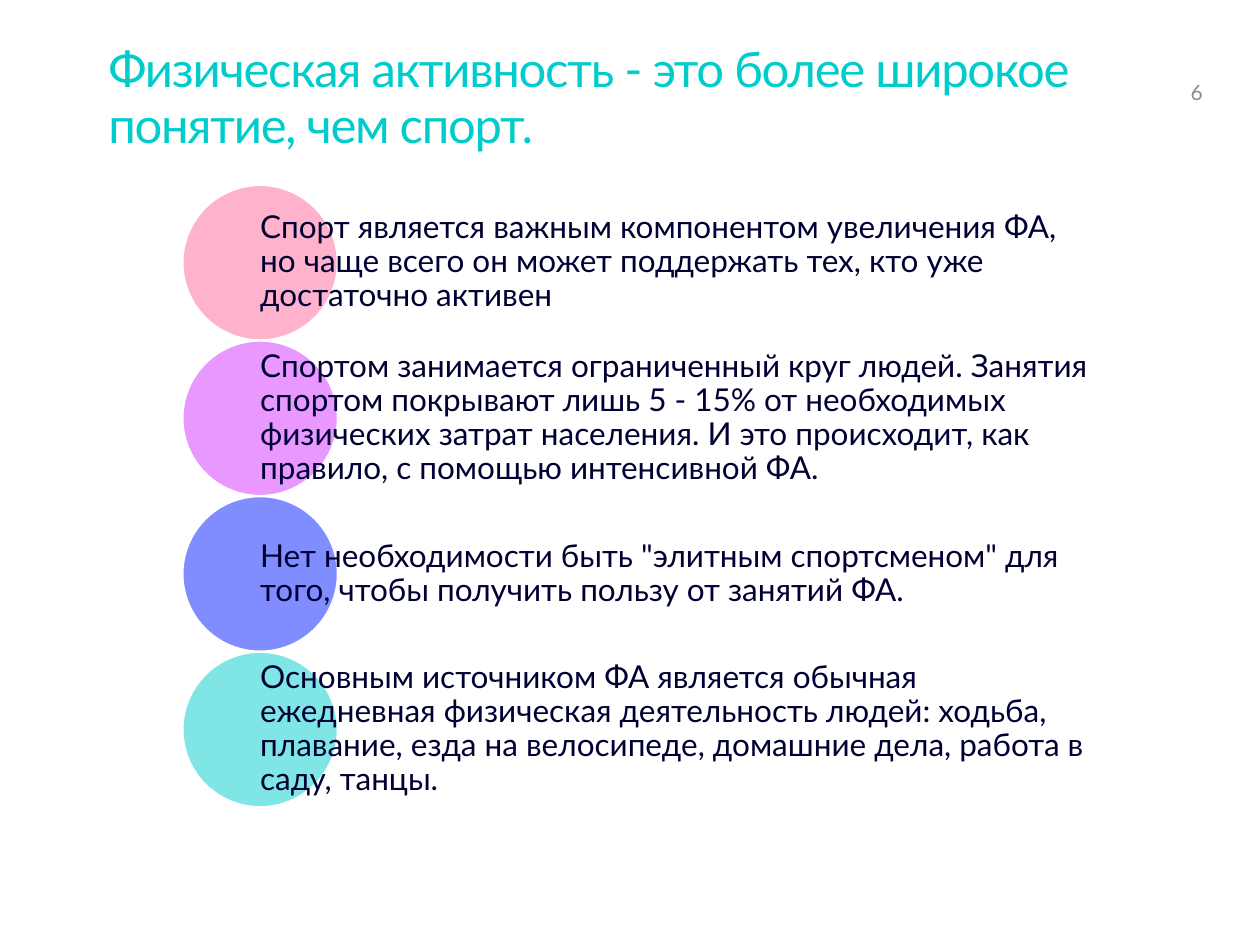
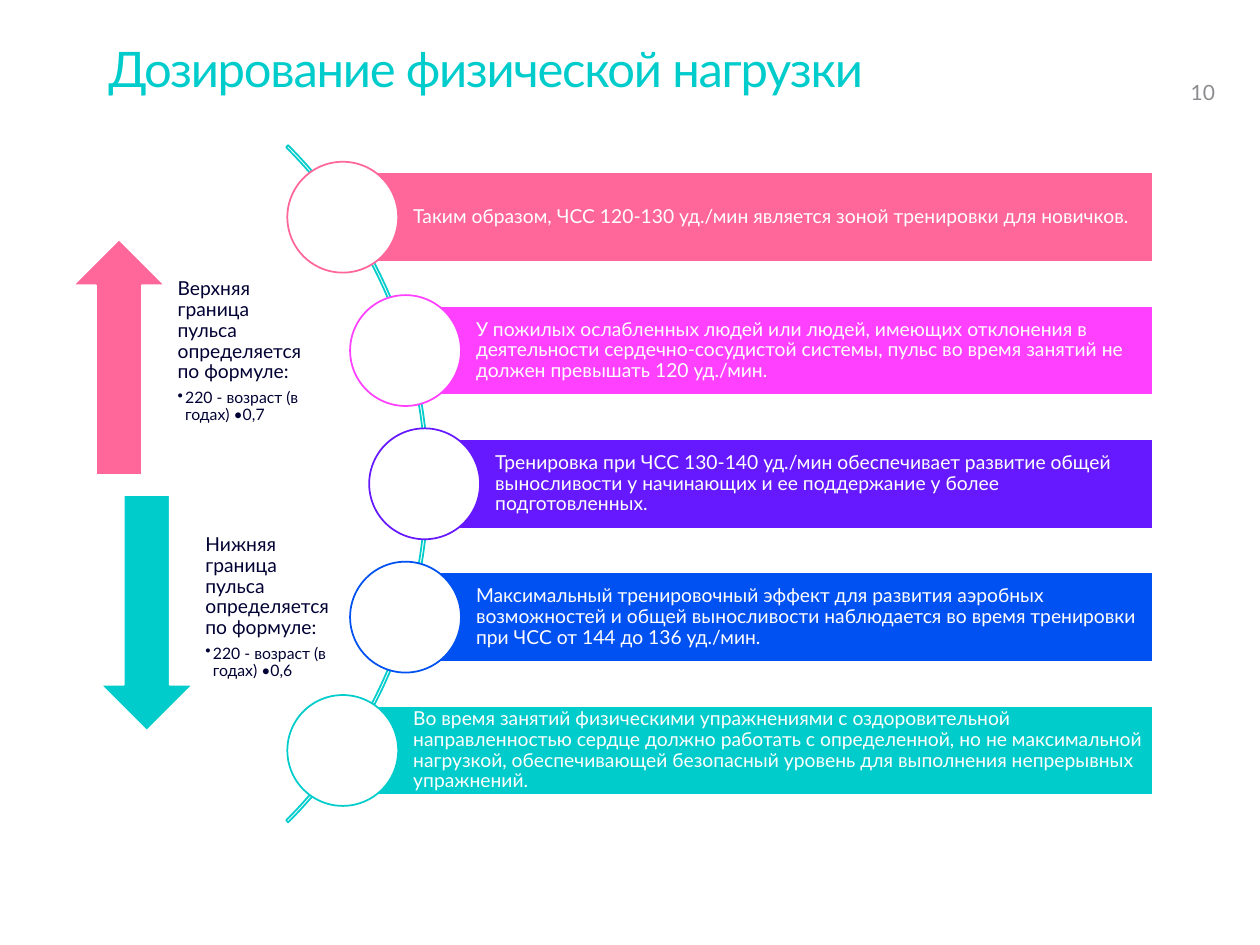
from math import sqrt

from lxml.etree import SubElement
from pptx import Presentation
from pptx.dml.color import RGBColor
from pptx.enum.shapes import MSO_SHAPE as Kind
from pptx.enum.text import MSO_ANCHOR as Anchor, PP_ALIGN as Align
from pptx.oxml.ns import qn
from pptx.util import Inches, Pt

FONT = "Lato"
TEAL, PINK, INK, WHITE, GREY = "00CCCC", "FF6699", "000033", "FFFFFF", "8C8C90"

SPORT = {
    "title": "Физическая активность - это более широкое понятие, чем спорт.",
    "page": "6",
    "points": [
        (PINK, "Спорт является важным компонентом увеличения ФА, но чаще всего "
               "он может поддержать тех, кто уже достаточно активен"),
        ("D233FF", "Спортом занимается ограниченный круг людей. Занятия спортом "
                   "покрывают лишь 5 - 15% от необходимых физических затрат "
                   "населения. И это происходит, как правило, с помощью "
                   "интенсивной ФА."),
        ("001CFF", "Нет необходимости быть \"элитным спортсменом\" для того, "
                   "чтобы получить пользу от занятий ФА."),
        (TEAL, "Основным источником ФА является обычная ежедневная физическая "
               "деятельность людей: ходьба, плавание, езда на велосипеде, "
               "домашние дела, работа в саду, танцы."),
    ],
}

PULSE = {
    "title": "Дозирование физической нагрузки",
    "page": "10",
    "limits": [
        (Kind.UP_ARROW, PINK, 0.58, 1.9,
         "Верхняя граница пульса определяется по формуле:",
         "220 - возраст (в годах) •0,7"),
        (Kind.DOWN_ARROW, TEAL, 0.8, 3.93,
         "Нижняя граница пульса определяется по формуле:",
         "220 - возраст (в годах) •0,6"),
    ],
    "zones": [
        (PINK, "Таким образом, ЧСС 120-130 уд./мин является зоной тренировки "
               "для новичков."),
        ("FF40FF", "У пожилых ослабленных людей или людей, имеющих отклонения в "
                   "деятельности сердечно-сосудистой системы, пульс во время "
                   "занятий не должен превышать 120 уд./мин."),
        ("6619FF", "Тренировка при ЧСС 130-140 уд./мин обеспечивает развитие "
                   "общей выносливости у начинающих и ее поддержание у более "
                   "подготовленных."),
        ("0051F2", "Максимальный тренировочный эффект для развития аэробных "
                   "возможностей и общей выносливости наблюдается во время "
                   "тренировки при ЧСС от 144 до 136 уд./мин."),
        (TEAL, "Во время занятий физическими упражнениями с оздоровительной "
               "направленностью сердце должно работать с определенной, но не "
               "максимальной нагрузкой, обеспечивающей безопасный уровень для "
               "выполнения непрерывных упражнений."),
    ],
}


def color(code):
    return RGBColor.from_string(code)


def place(shape, *box):
    shape.left, shape.top, shape.width, shape.height = map(Inches, box)


def frame(shape, pads, anchor, wrap=True):
    """Set the insets (left, top, right, bottom), anchor and wrapping."""
    text = shape.text_frame
    text.margin_left, text.margin_top, text.margin_right, text.margin_bottom = map(
        Inches, pads)
    text.vertical_anchor, text.word_wrap = anchor, wrap
    return text


def style(par, size, code):
    par.alignment = Align.LEFT
    for run in par.runs:
        run.font.name, run.font.size = FONT, Pt(size)
        run.font.color.rgb = color(code)


def tighten(par, after):
    """Use 90% line spacing and a space after given in percent of a line."""
    par.line_spacing = 0.9
    gap = SubElement(par._p.get_or_add_pPr(), qn("a:spcAft"))
    SubElement(gap, qn("a:spcPct"), val=str(after * 1000))


def bullet(par, indent):
    props = par._p.get_or_add_pPr()
    props.set("marL", str(Inches(indent)))
    props.set("indent", str(-Inches(indent)))
    SubElement(props, qn("a:buChar"), char="•")


def fill_text(shape, text, size, code, pads):
    body = frame(shape, pads, Anchor.MIDDLE)
    body.text = text
    par = body.paragraphs[0]
    tighten(par, 35)
    style(par, size, code)
    return body


def draw(slide, kind, box, fill, line=WHITE, alpha=None):
    shape = slide.shapes.add_shape(kind, *map(Inches, box))
    shape.shadow.inherit = False
    if fill:
        shape.fill.solid()
        shape.fill.fore_color.rgb = color(fill)
    else:
        shape.fill.background()
    if alpha:
        tone = shape.fill._xPr.find(".//" + qn("a:srgbClr"))
        SubElement(tone, qn("a:alpha"), val=str(alpha * 1000))
    shape.line.color.rgb = color(line)
    shape.line.width = Pt(1)
    return shape


def add_box(slide, *box):
    return slide.shapes.add_textbox(*map(Inches, box))


def start(deck, data, high):
    """Add a slide with its title, of the given height, and its number."""
    slide = deck.slides.add_slide(deck.slide_layouts[5])
    title = slide.shapes.title
    place(title, 0.86, 0.28, 8.62, high)
    text = frame(title, (0, 0.05, 0, 0.05), Anchor.TOP)
    text.text = data["title"]
    par = text.paragraphs[0]
    par.line_spacing = Pt(32)
    style(par, 28, TEAL)
    par.runs[0].font._element.set("spc", "-70")

    page = frame(add_box(slide, 9.45, 0.4, 0.38, 0.47),
                 (0, 0.04, 0, 0.04), Anchor.BOTTOM, False)
    page.text = data["page"]
    style(page.paragraphs[0], 12, GREY)
    return slide


def add_points(slide, points):
    left, top, size, step = 1.45, 1.47, 1.23, 1.235
    for row, (tint, text) in enumerate(points):
        y = top + row * step
        draw(slide, Kind.OVAL, (left, y, size, size), tint, alpha=50)
        box = add_box(slide, left + size / 2, y, 6.58, size)
        fill_text(box, text, 18, INK, (0, 0.03, 0, 0.03))


def add_limits(slide, limits):
    wide, high = 0.73, 1.87
    for kind, tint, x, y, head, rule in limits:
        draw(slide, kind, (x, y, wide, high), tint)
        box = add_box(slide, x + wide + 0.01, y, 1.23, high)
        body = fill_text(box, head, 11, INK, (0.09, 0, 0.09, 0.09))
        par = body.add_paragraph()
        par.text = rule
        par.level = 1
        tighten(par, 15)
        bullet(par, 0.06)
        style(par, 9, INK)


def add_zones(slide, zones):
    """Set the circles along an arc, each with a bar to the right edge."""
    mid_x, mid_y, arc, reach = -0.4, 3.84, 3.8, 3.77
    step, size, high, right = 1.058, 0.88, 0.71, 9.15
    curve = draw(slide, Kind.BLOCK_ARC,
                 (mid_x - arc, mid_y - arc, 2 * arc, 2 * arc), None, TEAL)
    for spot, value in enumerate((189, 27, 0.003)):
        curve.adjustments[spot] = value
    for row, (tint, text) in enumerate(zones):
        rise = (row - len(zones) // 2) * step
        x, y = mid_x + sqrt(reach ** 2 - rise ** 2), mid_y + rise
        bar = draw(slide, Kind.RECTANGLE, (x, y - high / 2, right - x, high), tint)
        fill_text(bar, text, 11, WHITE, (0.56, 0.03, 0.03, 0.03))
        draw(slide, Kind.OVAL, (x - size / 2, y - size / 2, size, size), WHITE, tint)


def main():
    deck = Presentation()
    deck.slide_width, deck.slide_height = Inches(10), Inches(7.5)
    add_points(start(deck, SPORT, 1.03), SPORT["points"])
    pulse = start(deck, PULSE, 0.72)
    add_limits(pulse, PULSE["limits"])
    add_zones(pulse, PULSE["zones"])
    deck.save("out.pptx")


if __name__ == "__main__":
    main()
